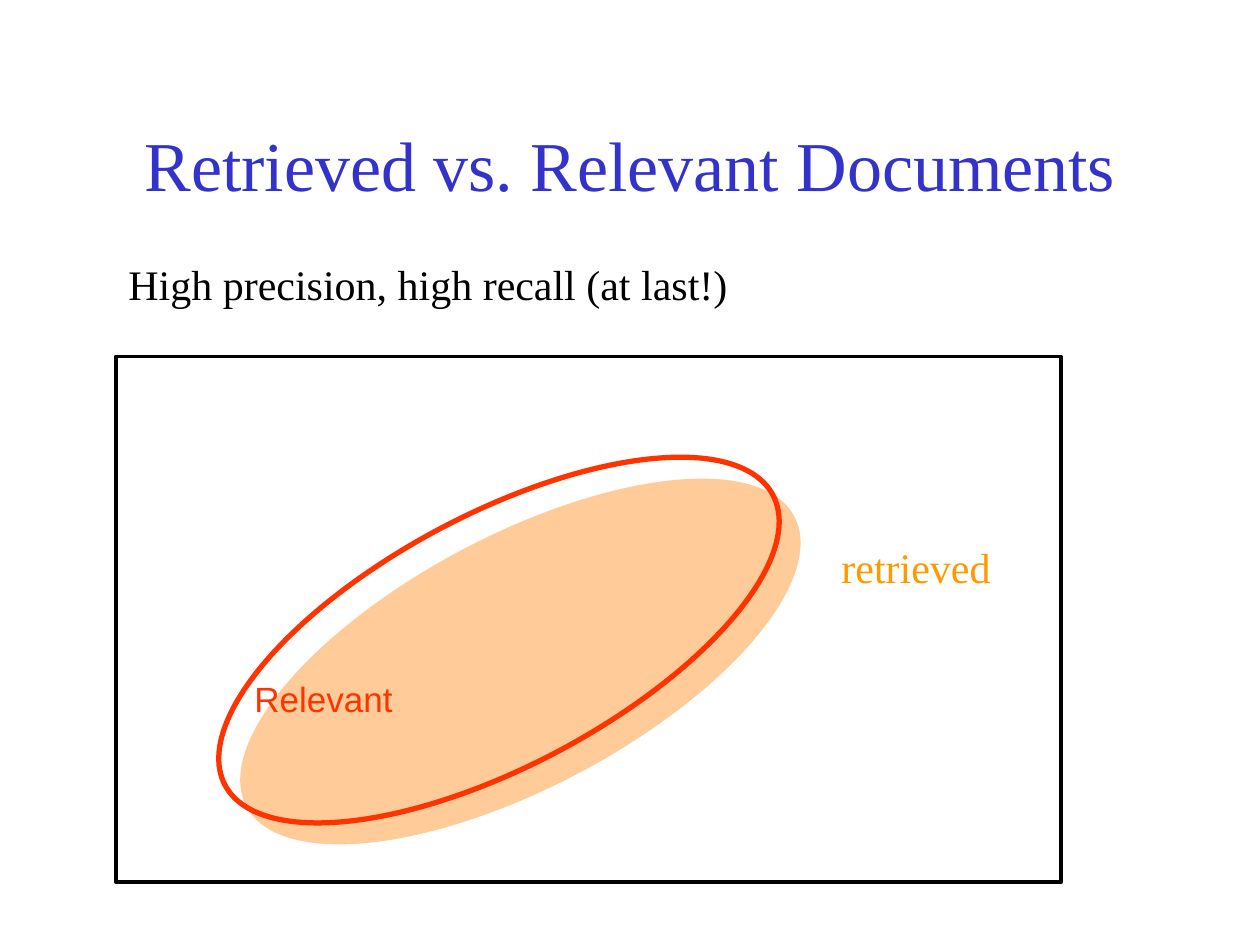
from dataclasses import dataclass

from pptx import Presentation
from pptx.dml.color import RGBColor
from pptx.enum.shapes import MSO_SHAPE
from pptx.enum.text import MSO_ANCHOR, MSO_AUTO_SIZE, PP_ALIGN
from pptx.util import Inches, Pt

OVAL, RECTANGLE = MSO_SHAPE.OVAL, MSO_SHAPE.RECTANGLE
MIDDLE, CENTER = MSO_ANCHOR.MIDDLE, PP_ALIGN.CENTER
FIT_SHAPE, NO_FIT = MSO_AUTO_SIZE.SHAPE_TO_FIT_TEXT, MSO_AUTO_SIZE.NONE


@dataclass(frozen=True)
class Theme:
    serif: str = "Times New Roman"
    sans: str = "Arial"
    title: str = "3333CC"
    ink: str = "000000"
    relevant: str = "FF3300"
    retrieved: str = "FF9900"
    retrieved_fill: str = "FFCC99"
    title_size: int = 40
    body_size: int = 24
    label_size: int = 20


theme = Theme()


def style_text(para, name, size, color):
    para.font.name = name
    para.font.size = Pt(size)
    para.font.color.rgb = RGBColor.from_string(color)


def add_outline(kind, left, top, width, height, fill, line, weight, rotation):
    shape = page.shapes.add_shape(
        kind, Inches(left), Inches(top), Inches(width), Inches(height)
    )
    shape.shadow.inherit = False
    shape.rotation = rotation
    if fill:
        shape.fill.solid()
        shape.fill.fore_color.rgb = RGBColor.from_string(fill)
    else:
        shape.fill.background()
    if line:
        shape.line.color.rgb = RGBColor.from_string(line)
        shape.line.width = Pt(weight)
    else:
        shape.line.fill.background()


deck = Presentation()
deck.slide_width, deck.slide_height = Inches(10), Inches(7.5)
page = deck.slides.add_slide(deck.slide_layouts[5])

title = page.shapes.title
title.left, title.top = Inches(0.75), Inches(0.67)
title.width, title.height = Inches(8.5), Inches(1.25)
title.text_frame.text = "Retrieved vs. Relevant Documents"
title.text_frame.vertical_anchor = MIDDLE
title.text_frame.auto_size = NO_FIT
title_para = title.text_frame.paragraphs[0]
title_para.alignment = CENTER
style_text(title_para, theme.serif, theme.title_size, theme.title)

outlines = [
    (OVAL, 1.67, 4.25, 4.92, 2, theme.retrieved_fill, None, 0, 332.1),
    (OVAL, 1.5, 4.08, 4.92, 2, None, theme.relevant, 3, 332.1),
    (RECTANGLE, 0.92, 2.83, 7.5, 4.17, None, theme.ink, 2.25, 0),
]
for outline in outlines:
    add_outline(*outline)

labels = [
    ("Relevant", 1.92, 5.33, 1.3, 0.43, theme.sans, theme.label_size, theme.relevant),
    ("High precision, high recall (at last!)", 0.92, 2, 4.96, 0.5,
     theme.serif, theme.body_size, theme.ink),
    ("retrieved", 6.58, 4.25, 1.39, 0.5, theme.serif, theme.body_size, theme.retrieved),
]
for text, left, top, width, height, name, size, color in labels:
    box = page.shapes.add_textbox(
        Inches(left), Inches(top), Inches(width), Inches(height)
    )
    box.text_frame.word_wrap = False
    box.text_frame.auto_size = FIT_SHAPE
    box.text_frame.text = text
    style_text(box.text_frame.paragraphs[0], name, size, color)

deck.save("out.pptx")
